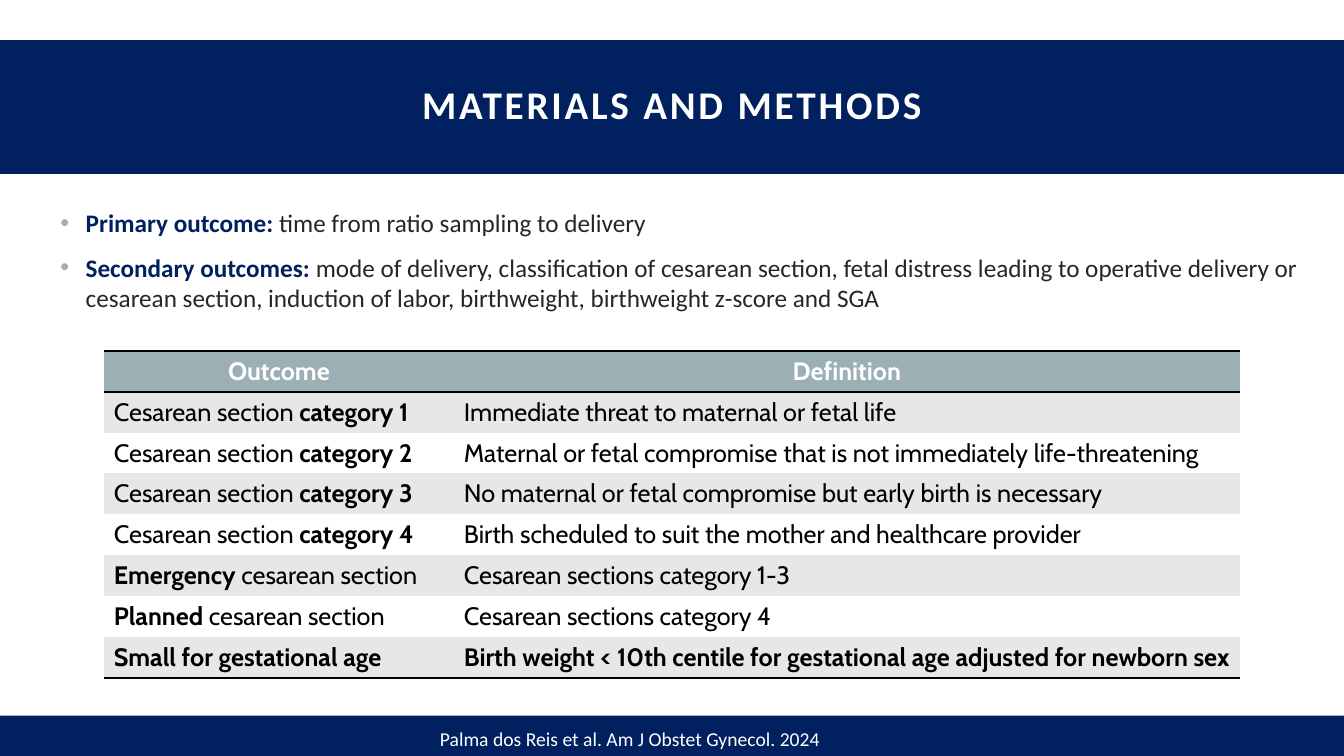
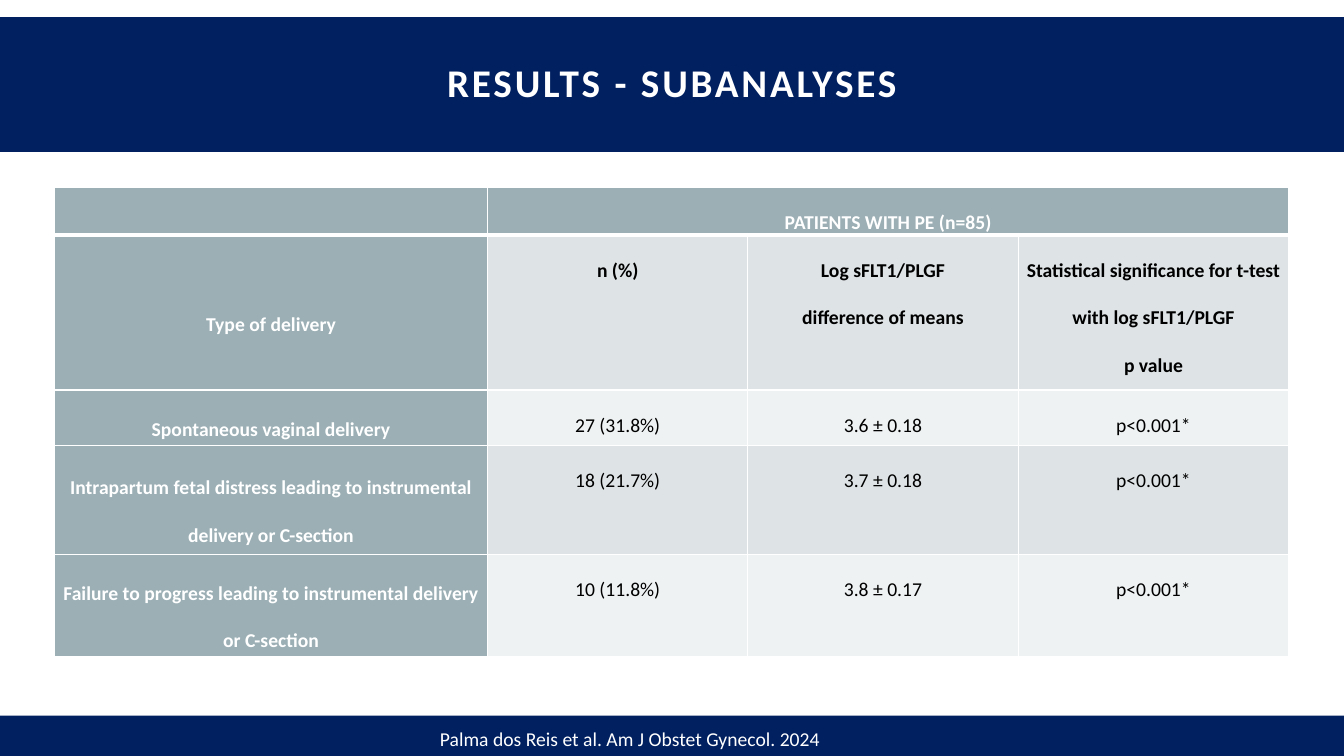
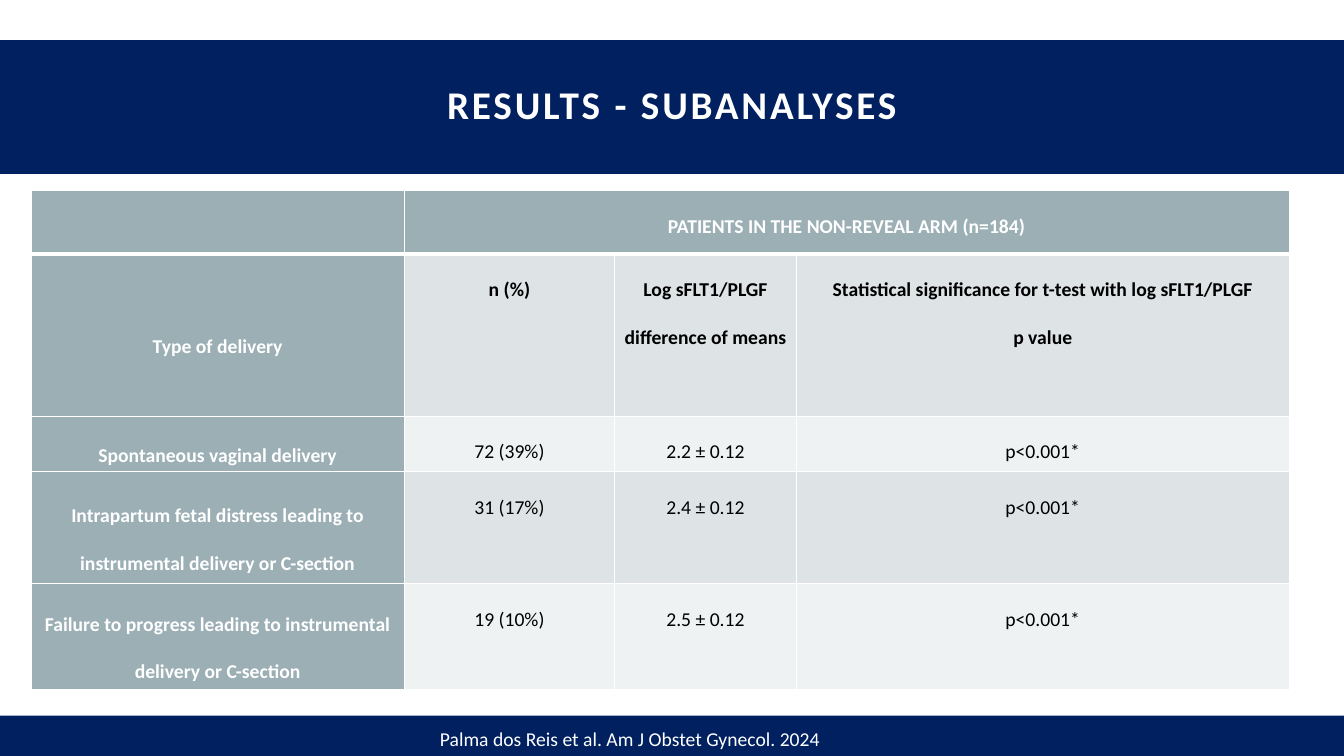
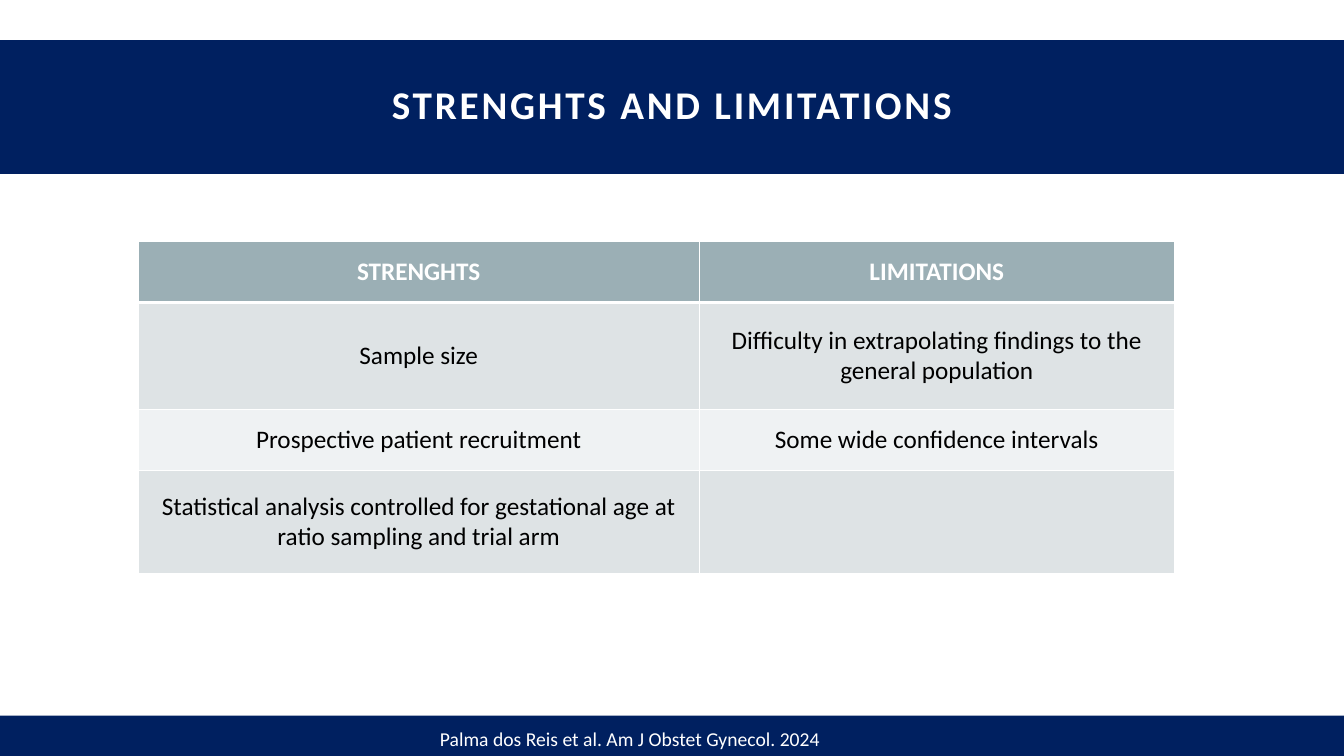
from dataclasses import dataclass
from typing import NamedTuple

from lxml import etree
from pptx import Presentation
from pptx import util as u
from pptx.dml import color as dml
from pptx.enum import shapes, text
from pptx.oxml import ns

Pt = u.Pt
COLORS = {
    "navy": "002060",
    "teal": "9BAFB5",
    "teal_mid": "DEE3E5",
    "teal_light": "EFF2F3",
    "gray": "E7E7E7",
    "body": "262626",
    "white": "FFFFFF",
    "black": "000000",
}
SLIDE_WIDTH, SLIDE_HEIGHT = 960, 540
BAND_TOP, BAND_HEIGHT = 29.5, 93.6
BODY_FONT = "Calibri"
CITATION = "Palma dos Reis et al. Am J Obstet Gynecol. 2024"
NO_TABLE_STYLE = "{2D5ABB26-0587-4C30-8999-92F81FD0307C}"
CENTER, LEFT = text.PP_ALIGN.CENTER, text.PP_ALIGN.LEFT
TOP, MIDDLE = text.MSO_ANCHOR.TOP, text.MSO_ANCHOR.MIDDLE


class Run(NamedTuple):
    text: str
    bold: bool = False
    color: str = "black"


class Edge(NamedTuple):
    color: str
    width: float


@dataclass
class Cell:
    paragraphs: list[list[Run]]
    fill: str
    align: text.PP_ALIGN = CENTER
    anchor: text.MSO_ANCHOR = MIDDLE


@dataclass
class Grid:
    left: float
    top: float
    columns: list[float]
    rows: list[float]
    row_edges: list[Edge | None]
    column_edge: Edge | None
    font: str = BODY_FONT
    size: float = 18
    line_spacing: float = 1.0
    margin_x: float = 7.2
    margin_y: float = 3.6
    merge_heading: bool = False


THIN, THICK = Edge("white", 1), Edge("white", 3)
RULE = Edge("black", 2)


def rgb(name: str) -> dml.RGBColor:
    return dml.RGBColor.from_string(COLORS[name])


def add_run(paragraph, run: Run, size: float, font: str = BODY_FONT):
    added = paragraph.add_run()
    added.text = run.text
    added.font.name = font
    added.font.size = Pt(size)
    added.font.bold = run.bold
    added.font.color.rgb = rgb(run.color)
    return added


def place(shape, left: float, top: float, width: float, height: float) -> None:
    shape.left, shape.top = Pt(left), Pt(top)
    shape.width, shape.height = Pt(width), Pt(height)


def add_color(parent, tag: str, name: str) -> None:
    holder = etree.SubElement(parent, ns.qn(tag))
    etree.SubElement(holder, ns.qn("a:srgbClr"), val=COLORS[name])


def add_title(slide, title: str, top: float) -> None:
    """Turn the title placeholder into the full-width band."""
    band = slide.shapes.title
    place(band, 0, top, SLIDE_WIDTH, BAND_HEIGHT)
    band.fill.solid()
    band.fill.fore_color.rgb = rgb("navy")
    band.line.color.rgb = rgb("navy")
    band.line.width = Pt(2.5)
    frame = band.text_frame
    frame.auto_size = text.MSO_AUTO_SIZE.NONE
    frame.vertical_anchor = MIDDLE
    frame.margin_left = frame.margin_right = Pt(14.4)
    frame.margin_top = frame.margin_bottom = Pt(14.4)
    paragraph = frame.paragraphs[0]
    paragraph.alignment = CENTER
    paragraph.line_spacing = 0.9
    run = add_run(paragraph, Run(title, True, "white"), 28)
    run.font._element.set("spc", "200")


def add_footer(slide) -> None:
    band = slide.shapes.add_shape(
        shapes.MSO_SHAPE.RECTANGLE, 0, Pt(511.2), Pt(SLIDE_WIDTH), Pt(31))
    band.shadow.inherit = False
    band.fill.solid()
    band.fill.fore_color.rgb = rgb("navy")
    band.line.fill.background()
    box = slide.shapes.add_textbox(Pt(307.2), Pt(515.5), Pt(388), Pt(24.5))
    box.text_frame.word_wrap = True
    add_run(box.text_frame.paragraphs[0], Run(CITATION, color="white"), 14)


def add_slide(presentation, title: str, layout: str = "Title Only",
              band_top: float = BAND_TOP):
    slide = presentation.slides.add_slide(
        presentation.slide_layouts.get_by_name(layout))
    add_title(slide, title, band_top)
    add_footer(slide)
    return slide


def add_bullets(slide, bullets: list[list[Run]]) -> None:
    body = slide.placeholders[1]
    place(body, 18, 144.7, 924, 84.2)
    frame = body.text_frame
    frame.auto_size = text.MSO_AUTO_SIZE.NONE
    for index, runs in enumerate(bullets):
        paragraph = frame.add_paragraph() if index else frame.paragraphs[0]
        paragraph.space_before = Pt(10)
        properties = paragraph._p.get_or_add_pPr()
        properties.set("marL", str(Pt(36)))
        properties.set("indent", str(Pt(-18)))
        add_color(properties, "a:buClr", "teal")
        etree.SubElement(properties, ns.qn("a:buChar"), char="•")
        for run in runs:
            add_run(paragraph, run, 18)


def set_border(cell, side: str, edge: Edge | None) -> None:
    properties = cell._tc.get_or_add_tcPr()
    line = etree.SubElement(properties, ns.qn(f"a:ln{side}"))
    if edge is None:
        line.set("w", "0")
        etree.SubElement(line, ns.qn("a:noFill"))
    else:
        line.set("w", str(Pt(edge.width)))
        add_color(line, "a:solidFill", edge.color)


def fill_cell(target, cell: Cell, grid: Grid) -> None:
    target.fill.solid()
    target.fill.fore_color.rgb = rgb(cell.fill)
    target.vertical_anchor = cell.anchor
    target.margin_left = target.margin_right = Pt(grid.margin_x)
    target.margin_top = target.margin_bottom = Pt(grid.margin_y)
    frame = target.text_frame
    for index, runs in enumerate(cell.paragraphs):
        paragraph = frame.add_paragraph() if index else frame.paragraphs[0]
        paragraph.alignment = cell.align
        paragraph.line_spacing = grid.line_spacing
        for run in runs:
            add_run(paragraph, run, grid.size, grid.font)


def add_grid(slide, grid: Grid, cells: list[list[Cell]]) -> None:
    table = slide.shapes.add_table(
        len(grid.rows), len(grid.columns), Pt(grid.left), Pt(grid.top),
        Pt(sum(grid.columns)), Pt(sum(grid.rows))).table
    table._tbl.tblPr.find(ns.qn("a:tableStyleId")).text = NO_TABLE_STYLE
    table.first_row = table.horz_banding = False
    for column, width in zip(table.columns, grid.columns):
        column.width = Pt(width)
    for row, height in zip(table.rows, grid.rows):
        row.height = Pt(height)
    for r, row_cells in enumerate(cells):
        for c, cell in enumerate(row_cells):
            target = table.cell(r, c)
            set_border(target, "L", grid.column_edge)
            set_border(target, "R", grid.column_edge)
            set_border(target, "T", grid.row_edges[r])
            set_border(target, "B", grid.row_edges[r + 1])
            fill_cell(target, cell, grid)
    if grid.merge_heading:
        table.cell(0, 1).merge(table.cell(0, len(grid.columns) - 1))


def heading(label: str = "") -> Cell:
    return Cell([[Run(label, True, "white")]] if label else [], "teal")


def band_fill(index: int) -> str:
    return "teal_light" if index % 2 else "teal_mid"


def add_delivery_table(slide, grid: Grid, group: str, column_heads: list[str],
                       results: list[tuple[str, str]]) -> None:
    """Compare the delivery types of one patient group."""
    group_head = heading(group)
    group_head.anchor = TOP
    cells = [[heading(), group_head, heading(), heading()]]
    labels = ["Type of delivery", "Spontaneous vaginal delivery",
              "Intrapartum fetal distress leading to instrumental delivery or C-section",
              "Failure to progress leading to instrumental delivery or C-section"]
    values = [column_heads] + [[*result, "p<0.001*"] for result in results]
    for index, (label, entries) in enumerate(zip(labels, values)):
        cells.append([heading(label)] + [
            Cell([[Run(line, index == 0)] for line in entry.split("\n")],
                 band_fill(index), anchor=TOP)
            for entry in entries])
    add_grid(slide, grid, cells)


def build_methods(presentation) -> None:
    slide = add_slide(presentation, "MATERIALS AND METHODS", "Title and Content")
    add_bullets(slide, [
        [Run("Primary outcome: ", True, "navy"),
         Run("time from ratio sampling to delivery", color="body")],
        [Run("Secondary outcomes: ", True, "navy"),
         Run("mode of delivery, classification of cesarean section, fetal distress "
             "leading to operative delivery or cesarean section, induction of labor, "
             "birthweight, birthweight z-score and SGA", color="body")],
    ])
    categories = [
        "Immediate threat to maternal or fetal life",
        "Maternal or fetal compromise that is not immediately life-threatening",
        "No maternal or fetal compromise but early birth is necessary",
        "Birth scheduled to suit the mother and healthcare provider",
    ]
    outcomes = [
        ([Run("Cesarean section "), Run(f"category {number}", True)], [Run(definition)])
        for number, definition in enumerate(categories, 1)
    ] + [
        ([Run("Emergency", True), Run(" cesarean section")],
         [Run("Cesarean sections category 1-3")]),
        ([Run("Planned", True), Run(" cesarean section")],
         [Run("Cesarean sections category 4")]),
        ([Run("Small for gestational age", True)],
         [Run("Birth weight < 10th centile for gestational age adjusted for newborn sex",
              True)]),
    ]
    cells = [[heading("Outcome"), heading("Definition")]]
    for index, pair in enumerate(outcomes):
        fill = "white" if index % 2 else "gray"
        cells.append([Cell([runs], fill, LEFT, TOP) for runs in pair])
    for cell in cells[0]:
        cell.anchor = TOP
    grid = Grid(74.2, 250.6, [250, 561.5], [29.2] * 8,
                [RULE, RULE, *[None] * 6, RULE], None, font="Cabin")
    add_grid(slide, grid, cells)


def build_subanalyses(presentation) -> None:
    title = "RESULTS - SUBANALYSES"
    significance = "Statistical significance for t-test with log sFLT1/PLGF\np value"
    edges = [THIN, THICK, *[THIN] * 4]
    shared = dict(row_edges=edges, column_edge=THIN, size=14, line_spacing=2.0,
                  margin_y=0, merge_heading=True)
    add_delivery_table(
        add_slide(presentation, title, band_top=13.7),
        Grid(38.9, 133.9, [309.5, 185.8, 193.2, 193.2],
             [33.8, 110.9, 39.6, 77.8, 72.7], margin_x=3.6, **shared),
        "PATIENTS WITH PE (n=85)",
        ["n (%)", "Log sFLT1/PLGF\ndifference of means", significance],
        [("27 (31.8%)", "3.6 ± 0.18"), ("18 (21.7%)", "3.7 ± 0.18"),
         ("10 (11.8%)", "3.8 ± 0.17")])
    add_delivery_table(
        add_slide(presentation, title),
        Grid(22.3, 136.1, [266.4, 150.5, 129.6, 352.1],
             [45.4, 115.9, 39.6, 79.9, 75.6], margin_x=4.3, **shared),
        "PATIENTS IN THE NON-REVEAL ARM (n=184)",
        ["n (%)", "Log sFLT1/PLGF difference of means", significance],
        [("72 (39%)", "2.2 ± 0.12"), ("31 (17%)", "2.4 ± 0.12"),
         ("19 (10%)", "2.5 ± 0.12")])


def build_strengths(presentation) -> None:
    slide = add_slide(presentation, "STRENGHTS AND LIMITATIONS")
    points = [
        ("Sample size",
         "Difficulty in extrapolating findings to the general population"),
        ("Prospective patient recruitment", "Some wide confidence intervals"),
        ("Statistical analysis controlled for gestational age at ratio sampling "
         "and trial arm", ""),
    ]
    cells = [[heading("STRENGHTS"), heading("LIMITATIONS")]]
    for index, pair in enumerate(points):
        cells.append([Cell([[Run(point)]] if point else [], band_fill(index))
                      for point in pair])
    grid = Grid(98.6, 172.1, [401, 339.1], [43.9, 76.3, 43.9, 73.4],
                [THIN, THICK, THIN, THIN, THIN], THIN)
    add_grid(slide, grid, cells)


def main() -> None:
    presentation = Presentation()
    presentation.slide_width = Pt(SLIDE_WIDTH)
    presentation.slide_height = Pt(SLIDE_HEIGHT)
    build_methods(presentation)
    build_subanalyses(presentation)
    build_strengths(presentation)
    presentation.save("out.pptx")


if __name__ == "__main__":
    main()
